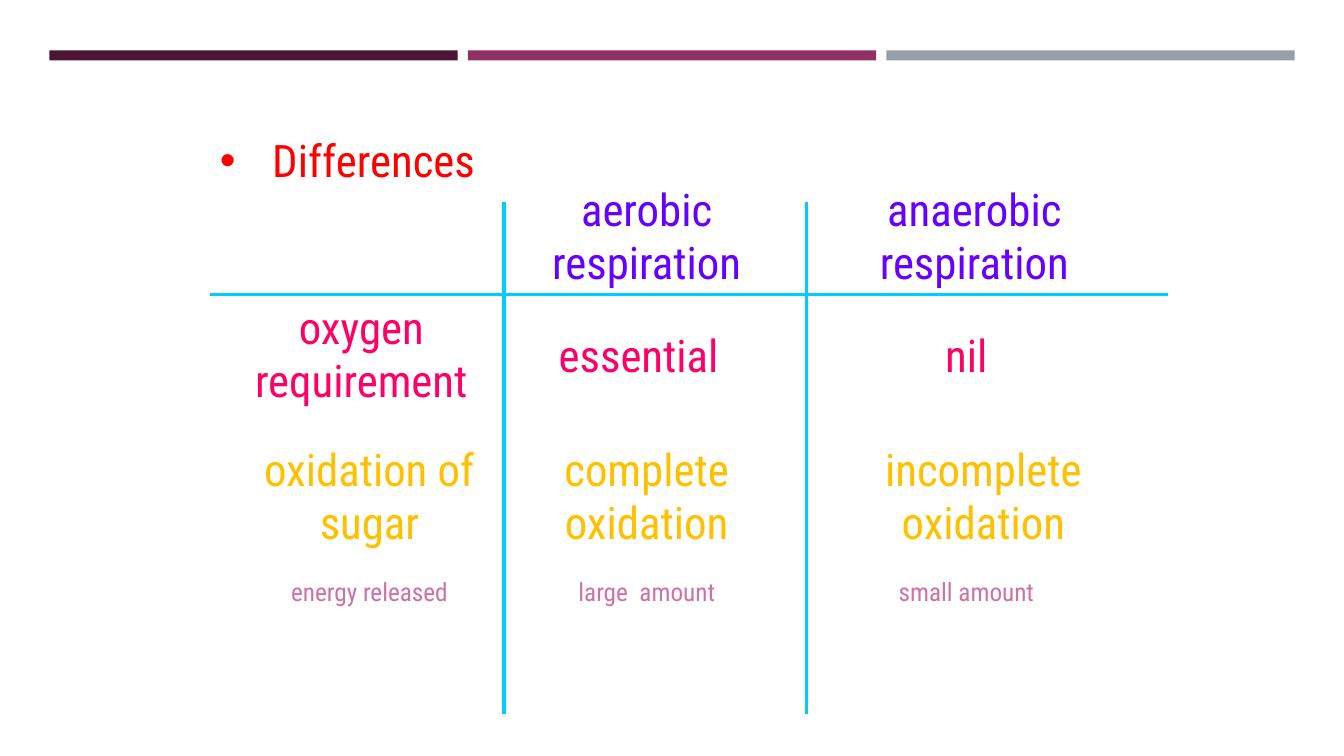
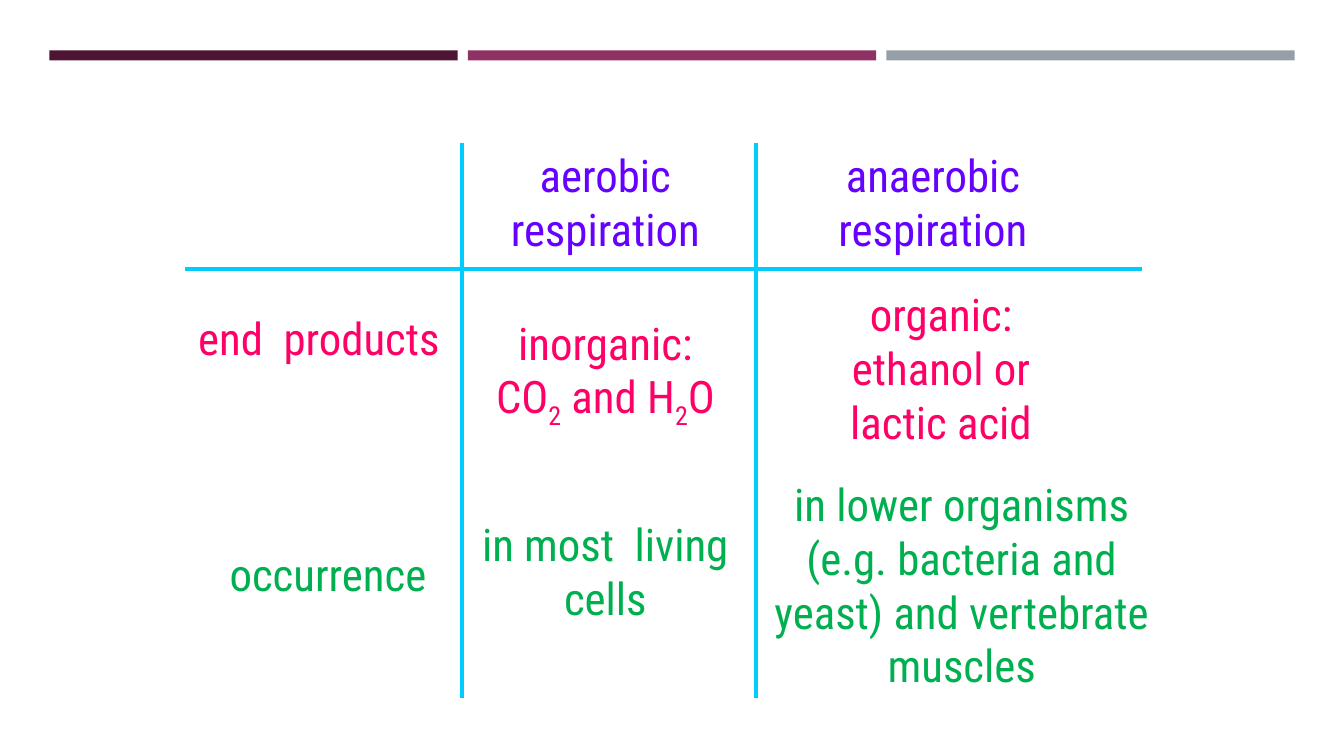
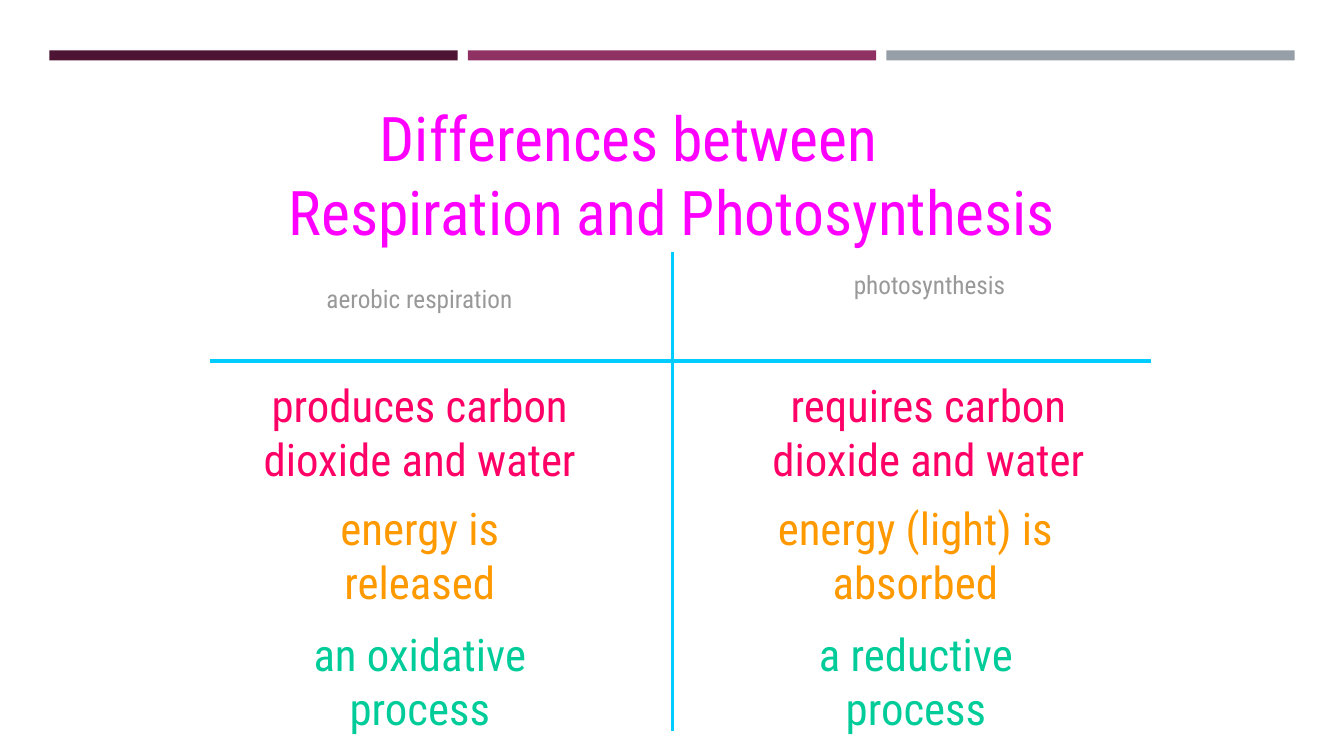
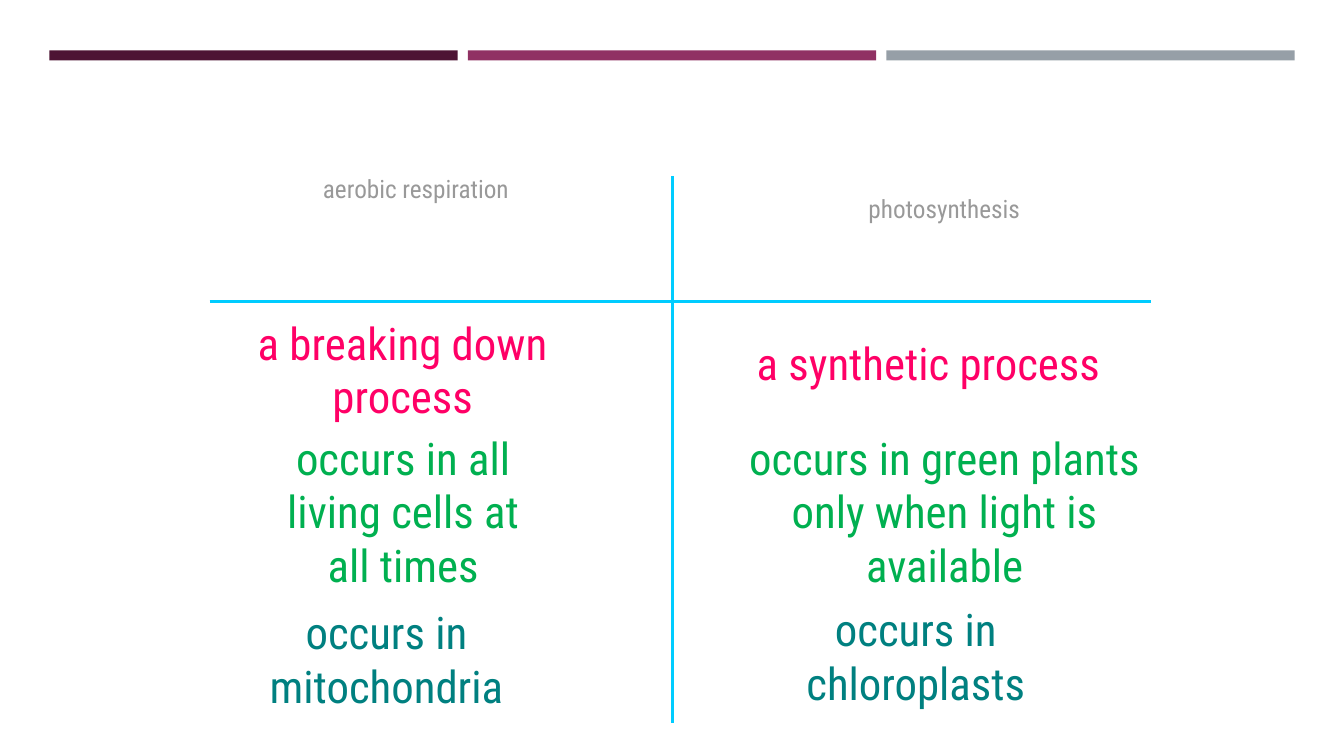
"""Build four slides comparing aerobic respiration, anaerobic respiration and photosynthesis."""
from dataclasses import dataclass

from lxml import etree
from pptx import Presentation
from pptx.dml.color import RGBColor
from pptx.enum.shapes import MSO_CONNECTOR, MSO_SHAPE
from pptx.enum.text import MSO_ANCHOR, MSO_AUTO_SIZE, PP_ALIGN
from pptx.oxml.ns import qn
from pptx.util import Inches, Pt

RECTANGLE = MSO_SHAPE.RECTANGLE
STRAIGHT = MSO_CONNECTOR.STRAIGHT
NO_AUTOFIT = MSO_AUTO_SIZE.NONE
TOP, MIDDLE = MSO_ANCHOR.TOP, MSO_ANCHOR.MIDDLE
LEFT, CENTER = PP_ALIGN.LEFT, PP_ALIGN.CENTER


@dataclass(frozen=True)
class Theme:
    """Colours, font and type sizes."""
    font: str = "Roboto Condensed"
    title_size: int = 44
    text_size: int = 32
    small_size: int = 18
    bands: tuple = ("4D1434", "903163", "969FA7")
    grid: str = "00CCFF"
    red: str = "FF0000"
    magenta: str = "FF00FF"
    violet: str = "6600FF"
    pink: str = "FF0066"
    gold: str = "FFC000"
    orange: str = "FF9900"
    mauve: str = "CF71A2"
    green: str = "00B050"
    mint: str = "00CC99"
    teal: str = "008080"
    gray: str = "999999"


THEME = Theme()
LARGE, SMALL = THEME.text_size, THEME.small_size

# Each row holds colour, size and cells of text, left, top, width, line count.
SLIDES = [
    {
        "title": {"lines": ["Differences"], "box": (2.08, 1.08, 10, 0.83),
                  "size": LARGE, "color": THEME.red, "bullet": True},
        "grid": [(8, 2, 8, 7.08), (5, 2, 5, 7.08), (2.08, 2.92, 11.58, 2.92)],
        "rows": [
            (THEME.violet, LARGE, [("aerobic respiration", 5.08, 1.75, 2.67, 2),
                                   ("anaerobic respiration", 8.33, 1.75, 2.67, 2)]),
            (THEME.pink, LARGE, [("oxygen requirement", 2.25, 2.92, 2.67, 2),
                                 ("essential", 5, 3.2, 2.67, 1),
                                 ("nil", 8.25, 3.2, 2.67, 1)]),
            (THEME.gold, LARGE, [("oxidation of sugar", 2.33, 4.33, 2.67, 2),
                                 ("complete oxidation", 5.08, 4.33, 2.67, 2),
                                 ("incomplete oxidation", 8.42, 4.33, 2.67, 2)]),
            (THEME.mauve, SMALL, [("energy released", 2.33, 5.67, 2.67, 1),
                                  ("large  amount", 5.08, 5.67, 2.67, 1),
                                  ("small amount", 8.25, 5.67, 2.67, 1)]),
        ],
    },
    {
        "grid": [(7.5, 1.42, 7.5, 6.92), (4.58, 1.42, 4.58, 6.92), (1.83, 2.67, 11.33, 2.67)],
        "rows": [
            (THEME.violet, LARGE, [("aerobic respiration", 4.67, 1.42, 2.67, 2),
                                   ("anaerobic respiration", 7.92, 1.42, 2.67, 2)]),
            (THEME.pink, LARGE, [("end  products", 1.83, 3.03, 2.67, 1),
                                 ("inorganic: CO_2 and H_2O", 4.67, 3.08, 2.67, 2),
                                 ("organic: ethanol or lactic acid", 8, 2.8, 2.67, 3)]),
            (THEME.green, LARGE, [("occurrence", 1.92, 5.37, 2.67, 1),
                                  ("in most  living cells", 4.67, 5.08, 2.67, 2),
                                  ("in lower organisms (e.g. bacteria and yeast) and vertebrate muscles",
                                   7.58, 4.68, 3.92, 4)]),
        ],
    },
    {
        "title": {"lines": ["Differences between", "Respiration and Photosynthesis"],
                  "box": (1.56, 1.12, 9.36, 1.21),
                  "size": THEME.title_size, "color": THEME.magenta, "bullet": False},
        "grid": [(6.67, 2.5, 6.67, 7.25), (2.08, 3.58, 11.42, 3.58)],
        "rows": [
            (THEME.gray, SMALL, [("aerobic respiration", 2.8, 2.76, 2.72, 1),
                                 ("photosynthesis", 7.69, 2.62, 3.06, 1)]),
            (THEME.pink, LARGE, [("produces carbon dioxide and water", 2.25, 3.7, 3.83, 2),
                                 ("requires carbon dioxide and water", 7.17, 3.7, 4.08, 2)]),
            (THEME.orange, LARGE, [("energy is released", 2.83, 4.92, 2.67, 2),
                                   ("energy (light) is absorbed", 7.58, 4.92, 3, 2)]),
            (THEME.mint, LARGE, [("an oxidative process", 2.83, 6.17, 2.67, 2),
                                 ("a reductive process", 7.75, 6.17, 2.67, 2)]),
        ],
    },
    {
        "grid": [(6.67, 1.75, 6.67, 7.17), (2.08, 2.99, 11.42, 2.99)],
        "rows": [
            (THEME.gray, SMALL, [("aerobic respiration", 2.75, 1.67, 2.75, 1),
                                 ("photosynthesis", 7.82, 1.87, 3.09, 1)]),
            (THEME.pink, LARGE, [("a breaking down process", 2.08, 3.08, 3.83, 2),
                                 ("a synthetic process", 7.17, 3.28, 4.08, 1)]),
            (THEME.green, LARGE, [("occurs in all living cells at all times", 2.5, 4.22, 3, 3),
                                  ("occurs in green plants only when light is available",
                                   7.33, 4.22, 4.08, 3)]),
            (THEME.teal, LARGE, [("occurs in mitochondria", 2.17, 5.95, 3.33, 2),
                                 ("occurs in chloroplasts", 7.75, 5.92, 2.67, 2)]),
        ],
    },
]


def style_paragraph(paragraph, size, color, alignment):
    paragraph.alignment = alignment
    paragraph.font.name = THEME.font
    paragraph.font.size = Pt(size)
    paragraph.font.color.rgb = RGBColor.from_string(color)


presentation = Presentation()
presentation.slide_width, presentation.slide_height = Inches(13.33), Inches(7.5)
title_layout, blank_layout = presentation.slide_layouts[5], presentation.slide_layouts[6]
slides = [presentation.slides.add_slide(title_layout if "title" in content else blank_layout)
          for content in SLIDES]

for index, color in enumerate(THEME.bands):
    band = slides[0].shapes.add_shape(
        RECTANGLE, Inches(0.49 + 4.15 * index), Inches(0.5), Inches(4.05), Inches(0.1))
    band.name = f"Band {index + 1}"
    band.shadow.inherit = False
    band.fill.solid()
    band.fill.fore_color.rgb = RGBColor.from_string(color)
    band.line.fill.background()
    band.element.nvSpPr.cNvPr.set("id", str(20 + index))
    presentation.slide_master.shapes.element.append(band.element)

for slide, content in zip(slides, SLIDES):
    if "title" in content:
        heading = content["title"]
        title = slide.shapes.title
        title.left, title.top, title.width, title.height = map(Inches, heading["box"])
        frame = title.text_frame
        frame.text = "\n".join(heading["lines"])
        frame.auto_size = NO_AUTOFIT
        frame.vertical_anchor = TOP if heading["bullet"] else MIDDLE
        for paragraph in frame.paragraphs:
            style_paragraph(paragraph, heading["size"], heading["color"],
                            LEFT if heading["bullet"] else CENTER)
        properties = paragraph.font._element.getparent()
        if heading["bullet"]:
            paragraph.line_spacing = 1.35
            properties.set("marL", str(Inches(0.52)))
            properties.set("indent", str(-Inches(0.52)))
            default_run = properties.find(qn("a:defRPr"))
            for tag, key, value in (("a:buFont", "typeface", "Arial"), ("a:buChar", "char", "•")):
                bullet = etree.Element(qn(tag))
                bullet.set(key, value)
                default_run.addprevious(bullet)
        else:
            properties.set("marL", str(Inches(0.86)))

    for color, size, cells in content["rows"]:
        for text, left, top, width, line_count in cells:
            height = line_count * size / 60 + 0.1
            box = slide.shapes.add_textbox(Inches(left), Inches(top), Inches(width), Inches(height))
            box.text_frame.word_wrap = True
            paragraph = box.text_frame.paragraphs[0]
            style_paragraph(paragraph, size, color, CENTER)
            first, *marked = text.split("_")
            paragraph.add_run().text = first
            for piece in marked:
                subscript = paragraph.add_run()
                subscript.text = piece[0]
                subscript.font._element.set("baseline", "-25000")
                paragraph.add_run().text = piece[1:]

    for start_x, start_y, end_x, end_y in content["grid"]:
        rule = slide.shapes.add_connector(
            STRAIGHT, Inches(start_x), Inches(start_y), Inches(end_x), Inches(end_y))
        rule.line.color.rgb = RGBColor.from_string(THEME.grid)
        rule.line.width = Pt(2.5)
        etree.SubElement(rule.element.spPr, qn("a:effectLst"))

presentation.save("out.pptx")
